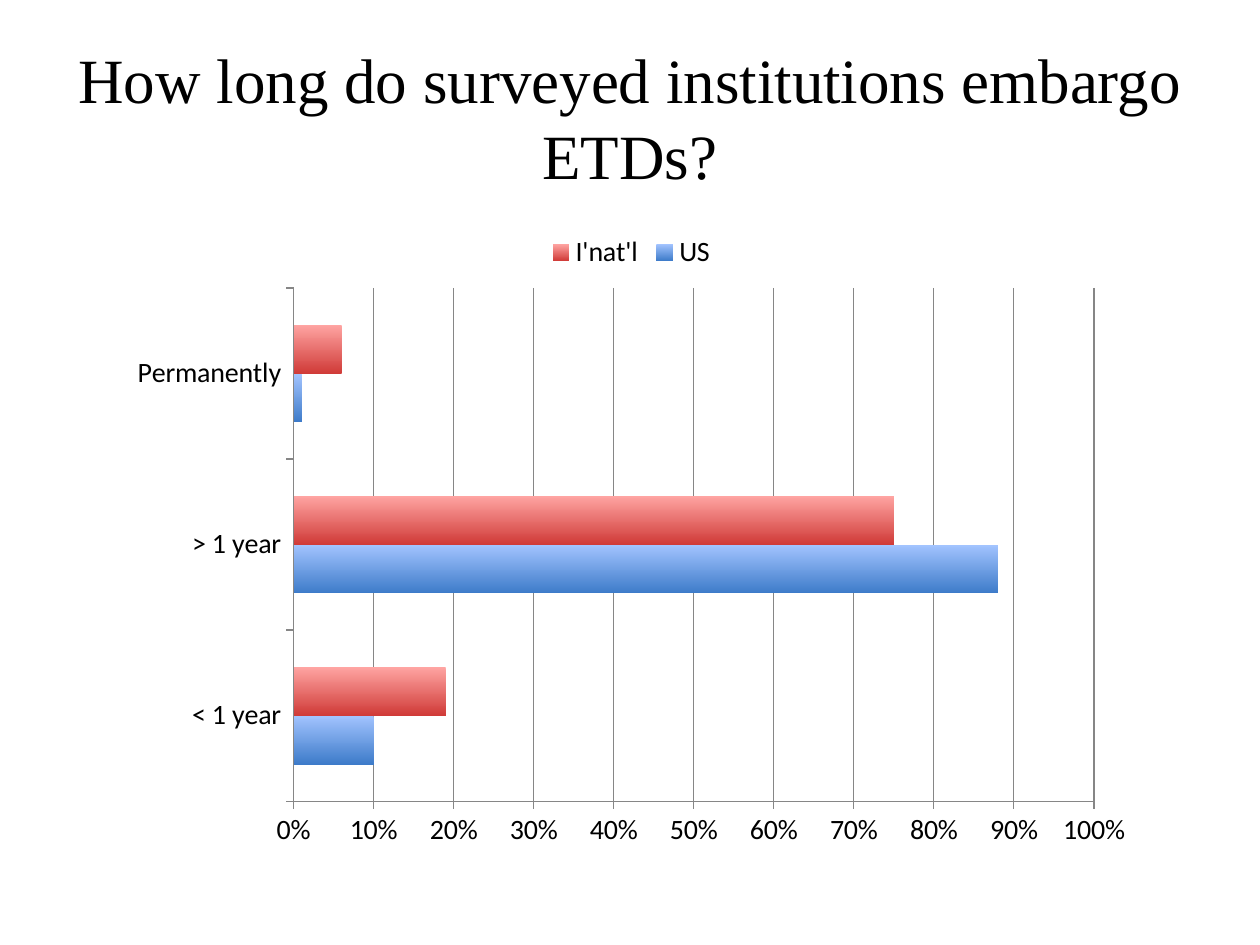
from pptx import Presentation
from pptx.chart.data import CategoryChartData
from pptx.dml.color import RGBColor
from pptx.enum.chart import XL_CHART_TYPE, XL_LEGEND_POSITION, XL_TICK_MARK
from pptx.enum.text import MSO_ANCHOR, PP_ALIGN
from pptx.util import Cm, Pt

CLUSTERED_BARS = XL_CHART_TYPE.BAR_CLUSTERED
LEGEND_TOP = XL_LEGEND_POSITION.TOP
TICK_OUTSIDE = XL_TICK_MARK.OUTSIDE
MIDDLE = MSO_ANCHOR.MIDDLE
CENTER = PP_ALIGN.CENTER


def color(hex_value):
    return RGBColor.from_string(hex_value)


presentation = Presentation()
presentation.slide_width = Cm(25.4)
presentation.slide_height = Cm(19.05)
slide = presentation.slides.add_slide(presentation.slide_layouts[6])

question = slide.shapes.add_textbox(Cm(1.27), Cm(0.76), Cm(22.86), Cm(3.18)).text_frame
question.word_wrap = True
question.vertical_anchor = MIDDLE
question.text = "How long do surveyed institutions embargo ETDs?"
question.paragraphs[0].alignment = CENTER
question_font = question.paragraphs[0].runs[0].font
question_font.name = "Times New Roman"
question_font.size = Pt(36)
question_font.color.rgb = color("000000")

embargo_data = CategoryChartData(number_format="0%")
embargo_data.categories = ["< 1 year", "> 1 year", "Permanently"]
embargo_data.add_series("US", [0.1, 0.88, 0.01])
embargo_data.add_series("I'nat'l", [0.19, 0.75, 0.06])
embargo_chart = slide.shapes.add_chart(
    CLUSTERED_BARS, Cm(2.36), Cm(4.45), Cm(20.73), Cm(12.9), embargo_data
).chart
embargo_chart.has_title = False
embargo_chart.font.name = "Calibri"
embargo_chart.font.size = Pt(16)
embargo_chart.font.color.rgb = color("000000")
embargo_chart.has_legend = True
embargo_chart.legend.position = LEGEND_TOP
embargo_chart.legend.include_in_layout = False

bars = embargo_chart.plots[0]
bars.gap_width = 150
bars.overlap = 0
bars.vary_by_categories = False
gradients = [("A3C4FF", "3D7BC9"), ("FFA5A3", "D03B38")]
for region, shades in zip(bars.series, gradients):
    region.invert_if_negative = False
    fill = region.format.fill
    fill.gradient()
    fill.gradient_angle = 270
    for stop, shade in zip(fill.gradient_stops, shades):
        stop.color.rgb = color(shade)

durations = embargo_chart.category_axis
shares = embargo_chart.value_axis
shares.minimum_scale = 0
shares.maximum_scale = 1
shares.major_unit = 0.1
shares.has_major_gridlines = True
shares.tick_labels.number_format = "0%"
shares.tick_labels.number_format_is_linked = False
for axis in (durations, shares):
    axis.major_tick_mark = TICK_OUTSIDE
for line in (durations.format.line, shares.format.line, shares.major_gridlines.format.line):
    line.color.rgb = color("868686")
    line.width = Pt(0.75)

presentation.save("out.pptx")
